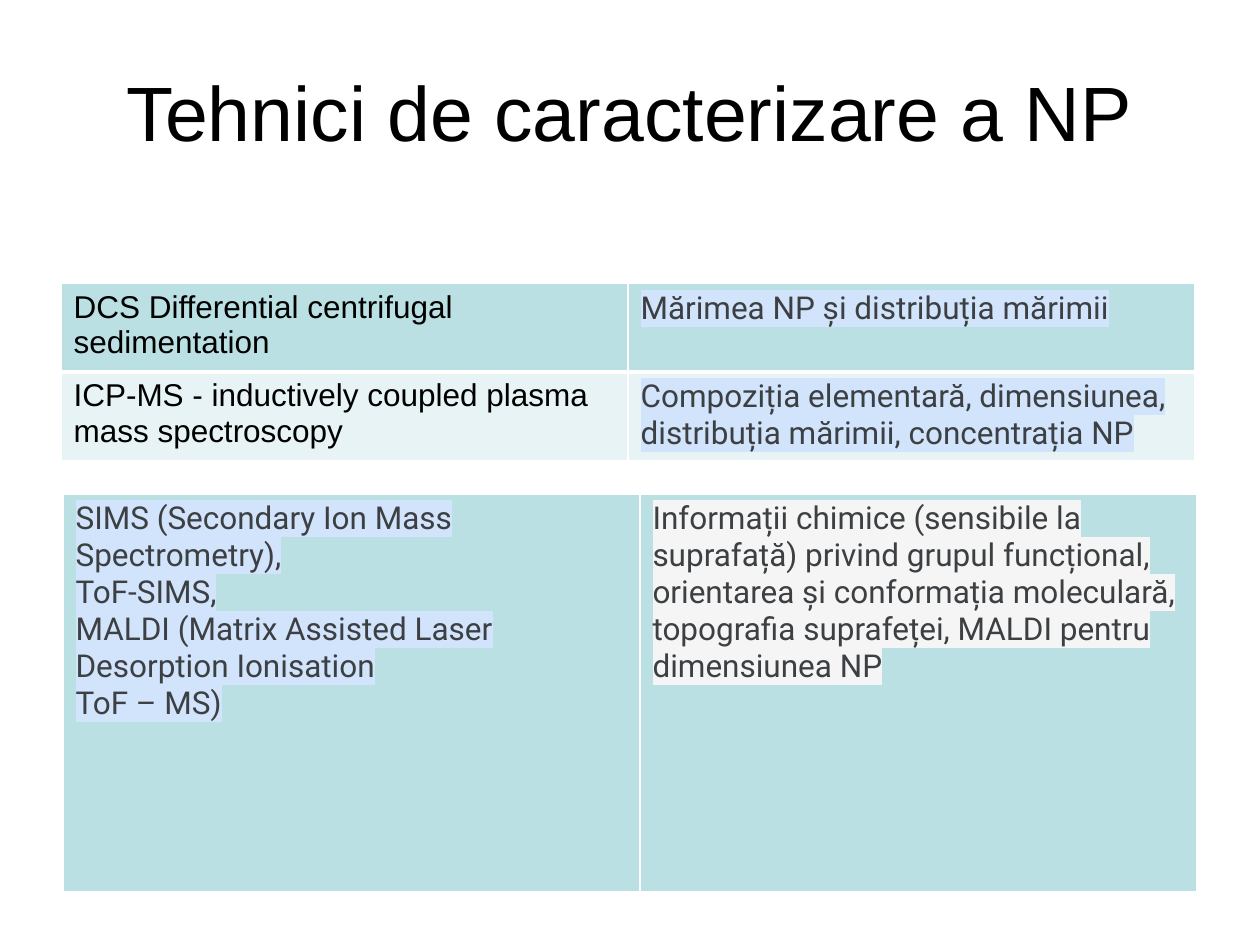
from lxml.etree import SubElement
from pptx import Presentation
from pptx.dml.color import RGBColor
from pptx.enum.text import MSO_ANCHOR, PP_ALIGN
from pptx.oxml import parse_xml
from pptx.oxml.ns import nsdecls, qn
from pptx.util import Cm, Pt

COLORS = {
    "black": "000000",
    "gray": "3C4043",
    "white": "FFFFFF",
    "teal": "BBE0E3",
    "pale_teal": "E7F3F4",
    "blue_mark": "D2E3FC",
    "gray_mark": "F5F5F5",
}
ARIAL = ("Arial", "black", None)
ROBOTO_BLUE = ("Roboto", "gray", "blue_mark")
ROBOTO_GRAY = ("Roboto", "gray", "gray_mark")


class SlideBuilder:
    title_size = 44
    body_size = 18

    def __init__(self, slide):
        self.slide = slide

    def add_run(self, paragraph, text, size, style):
        font_name, color, mark = style
        run = paragraph.add_run()
        run.text = text
        run.font.size = Pt(size)
        run.font.color.rgb = RGBColor.from_string(COLORS[color])
        if mark:
            properties = run.font._element
            highlight = SubElement(properties, qn("a:highlight"))
            SubElement(highlight, qn("a:srgbClr"), val=COLORS[mark])
        run.font.name = font_name

    def add_title(self, text, left, top, width, height):
        shape = self.slide.shapes.add_textbox(Cm(left), Cm(top), Cm(width), Cm(height))
        frame = shape.text_frame
        frame.word_wrap = True
        frame.vertical_anchor = MSO_ANCHOR.MIDDLE
        paragraph = frame.paragraphs[0]
        paragraph.alignment = PP_ALIGN.CENTER
        self.add_run(paragraph, text, self.title_size, ARIAL)

    def set_borders(self, cell, bottom_width):
        properties = cell._tc.get_or_add_tcPr()
        widths = {"lnL": 1, "lnR": 1, "lnT": 1, "lnB": bottom_width}
        for position, (side, width) in enumerate(widths.items()):
            line = parse_xml(
                f'<a:{side} {nsdecls("a")} w="{Pt(width)}"><a:solidFill>'
                f'<a:srgbClr val="{COLORS["white"]}"/></a:solidFill></a:{side}>'
            )
            properties.insert(position, line)

    def fill_cell(self, cell, lines, style, fill, bottom_width):
        cell.fill.solid()
        cell.fill.fore_color.rgb = RGBColor.from_string(COLORS[fill])
        self.set_borders(cell, bottom_width)
        frame = cell.text_frame
        for index, line in enumerate(lines):
            paragraph = frame.add_paragraph() if index else frame.paragraphs[0]
            self.add_run(paragraph, line, self.body_size, style)

    def add_table(self, rows, left, top, column_widths, row_height, height):
        shape = self.slide.shapes.add_table(
            len(rows), len(column_widths), Cm(left), Cm(top),
            Cm(sum(column_widths)), Cm(height),
        )
        table = shape.table
        table.first_row = False
        table.horz_banding = False
        for column, width in zip(table.columns, column_widths):
            column.width = Cm(width)
        for index, cells in enumerate(rows):
            table.rows[index].height = Cm(row_height)
            fill, bottom_width = ("pale_teal", 1) if index else ("teal", 3)
            for cell, (lines, style) in zip(table.rows[index].cells, cells):
                self.fill_cell(cell, lines, style, fill, bottom_width)
        shape.height = Cm(height)


def main():
    presentation = Presentation()
    presentation.slide_width = Cm(25.4)
    presentation.slide_height = Cm(19.05)
    slide = presentation.slides.add_slide(presentation.slide_layouts[6])
    builder = SlideBuilder(slide)

    builder.add_title("Tehnici de caracterizare a NP", 1.27, 0.64, 22.86, 3.18)

    size_methods = [
        [
            (["DCS Differential centrifugal sedimentation"], ARIAL),
            (["Mărimea NP și distribuția mărimii"], ROBOTO_BLUE),
        ],
        [
            (["ICP-MS - inductively coupled plasma mass spectroscopy"], ARIAL),
            (["Compoziția elementară, dimensiunea, distribuția mărimii, "
              "concentrația NP"], ROBOTO_BLUE),
        ],
    ]
    builder.add_table(size_methods, 1.23, 5.72, [11.43, 11.43], 1.04, 3.56)

    surface_methods = [
        [
            (["SIMS (Secondary Ion Mass Spectrometry),",
              "ToF-SIMS,",
              "MALDI (Matrix Assisted Laser Desorption Ionisation",
              "ToF – MS)"], ROBOTO_BLUE),
            (["Informații chimice (sensibile la suprafață) privind grupul "
              "funcțional, orientarea și conformația moleculară, topografia "
              "suprafeței, MALDI pentru dimensiunea NP"], ROBOTO_GRAY),
        ],
    ]
    builder.add_table(surface_methods, 1.27, 9.96, [11.63, 11.23], 8.05, 8.05)

    presentation.save("out.pptx")


if __name__ == "__main__":
    main()
